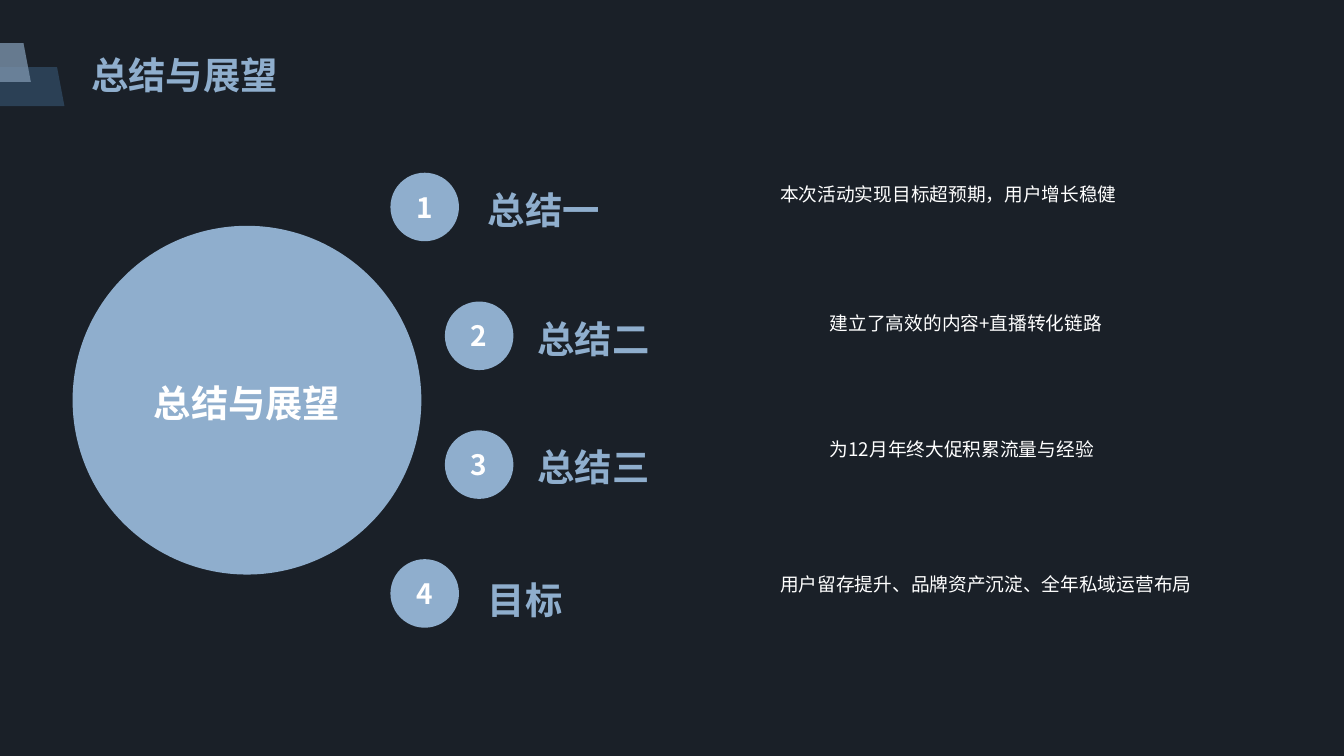
from dataclasses import dataclass

from lxml.etree import SubElement
from pptx import Presentation
from pptx.dml.color import RGBColor
from pptx.enum.shapes import MSO_SHAPE
from pptx.enum.text import MSO_ANCHOR, MSO_AUTO_SIZE, PP_ALIGN
from pptx.oxml.ns import qn
from pptx.util import Pt

# Content: number, heading, statement, indented, heading top, statement top
TITLE = "总结与展望"
POINTS = [
    ("1", "总结一", "本次活动实现目标超预期，用户增长稳健", False, 267, 267),
    ("2", "总结二", "建立了高效的内容+直播转化链路", True, 459, 459),
    ("3", "总结三", "为12月年终大促积累流量与经验", True, 650, 646),
    ("4", "目标", "用户留存提升、品牌资产沉淀、全年私域运营布局", False, 847, 847),
]
RIBBONS = [  # colour, top, top width, bottom width
    ("304860", 100, 85, 96),
    ("7890A8", 64, 35, 46),
]


@dataclass(frozen=True)
class Theme:
    font: str = "Noto Sans CJK SC"
    background: str = "1A2028"
    accent: str = "8FAECD"
    light: str = "FFFFFF"
    ribbon_opacity: int = 81


THEME = Theme()
HEADING = {"size": 40, "spacing": 56, "bold": True, "color": THEME.accent}
HUB_LABEL = {**HEADING, "color": THEME.light, "align": PP_ALIGN.CENTER}
NUMBER = {**HUB_LABEL, "size": 30, "spacing": 36}
STATEMENT = {"size": 20, "spacing": 28, "bold": False, "color": THEME.light,
             "align": PP_ALIGN.JUSTIFY}

# Layout: 100 px to the inch
PX = 9144
SLIDE_WIDTH, SLIDE_HEIGHT = 2000, 1125
RIBBON_HEIGHT = 58
BADGE_SIZE, BADGE_TOP, BADGE_STEP = 102, 257, 191.7
BADGE_LEFT = {False: 581, True: 662}
HEADING_LEFT = {False: 726, True: 800}
STATEMENT_OFFSET = 435


def px(*lengths):
    return [round(length * PX) for length in lengths]


def paint(shape, color):
    shape.shadow.inherit = False
    shape.fill.solid()
    shape.fill.fore_color.rgb = RGBColor.from_string(color)
    shape.line.fill.background()


def write(shape, text, style, margin=0, **frame_format):
    frame = shape.text_frame
    margins = {f"margin_{side}": px(margin)[0] for side in ("left", "top", "right", "bottom")}
    for name, value in {"word_wrap": True, **margins, **frame_format}.items():
        setattr(frame, name, value)
    paragraph = frame.paragraphs[0]
    paragraph.alignment = style.get("align", PP_ALIGN.LEFT)
    paragraph.line_spacing = Pt(style["spacing"])
    run = paragraph.add_run()
    run.text = text
    font_format = {"name": THEME.font, "size": Pt(style["size"]), "bold": style["bold"]}
    for name, value in font_format.items():
        setattr(run.font, name, value)
    run.font.color.rgb = RGBColor.from_string(style["color"])
    # Chinese glyphs take the East Asian typeface
    SubElement(run.font._element, qn("a:ea")).set("typeface", THEME.font)


def add_label(slide, text, box, style):
    label = slide.shapes.add_textbox(*px(*box))
    write(label, text, style, auto_size=MSO_AUTO_SIZE.SHAPE_TO_FIT_TEXT)


def add_circle(slide, left, top, size):
    circle = slide.shapes.add_shape(MSO_SHAPE.OVAL, *px(left, top, size, size))
    paint(circle, THEME.accent)
    return circle


def add_ribbon(slide, color, top, top_width, bottom_width):
    bottom = top + RIBBON_HEIGHT
    builder = slide.shapes.build_freeform(0, top, scale=PX)
    builder.add_line_segments([(top_width, top), (bottom_width, bottom), (0, bottom)])
    ribbon = builder.convert_to_shape()
    paint(ribbon, color)
    fill_color = ribbon._element.spPr.find(qn("a:solidFill"))[0]
    SubElement(fill_color, qn("a:alpha")).set("val", str(THEME.ribbon_opacity * 1000))


def add_point(slide, index, point):
    number, heading, statement, indented, heading_top, statement_top = point
    badge = add_circle(slide, BADGE_LEFT[indented], BADGE_TOP + index * BADGE_STEP, BADGE_SIZE)
    write(badge, number, NUMBER, margin=6, vertical_anchor=MSO_ANCHOR.MIDDLE)
    left = HEADING_LEFT[indented]
    add_label(slide, heading, (left, heading_top, 339, 78), HEADING)
    add_label(slide, statement, (left + STATEMENT_OFFSET, statement_top, 674, 39), STATEMENT)


def main():
    presentation = Presentation()
    presentation.slide_width, presentation.slide_height = px(SLIDE_WIDTH, SLIDE_HEIGHT)
    slide = presentation.slides.add_slide(presentation.slide_layouts[6])
    slide.background.fill.solid()
    slide.background.fill.fore_color.rgb = RGBColor.from_string(THEME.background)

    # Page title with its ribbons
    for ribbon in RIBBONS:
        add_ribbon(slide, *ribbon)
    add_label(slide, TITLE, (136, 67, 804, 78), HEADING)

    # Central hub
    add_circle(slide, 108, 336, 519)
    add_label(slide, TITLE, (190, 555, 355, 78), HUB_LABEL)

    # Numbered points around the hub
    for index, point in enumerate(POINTS):
        add_point(slide, index, point)

    presentation.save("out.pptx")


if __name__ == "__main__":
    main()
